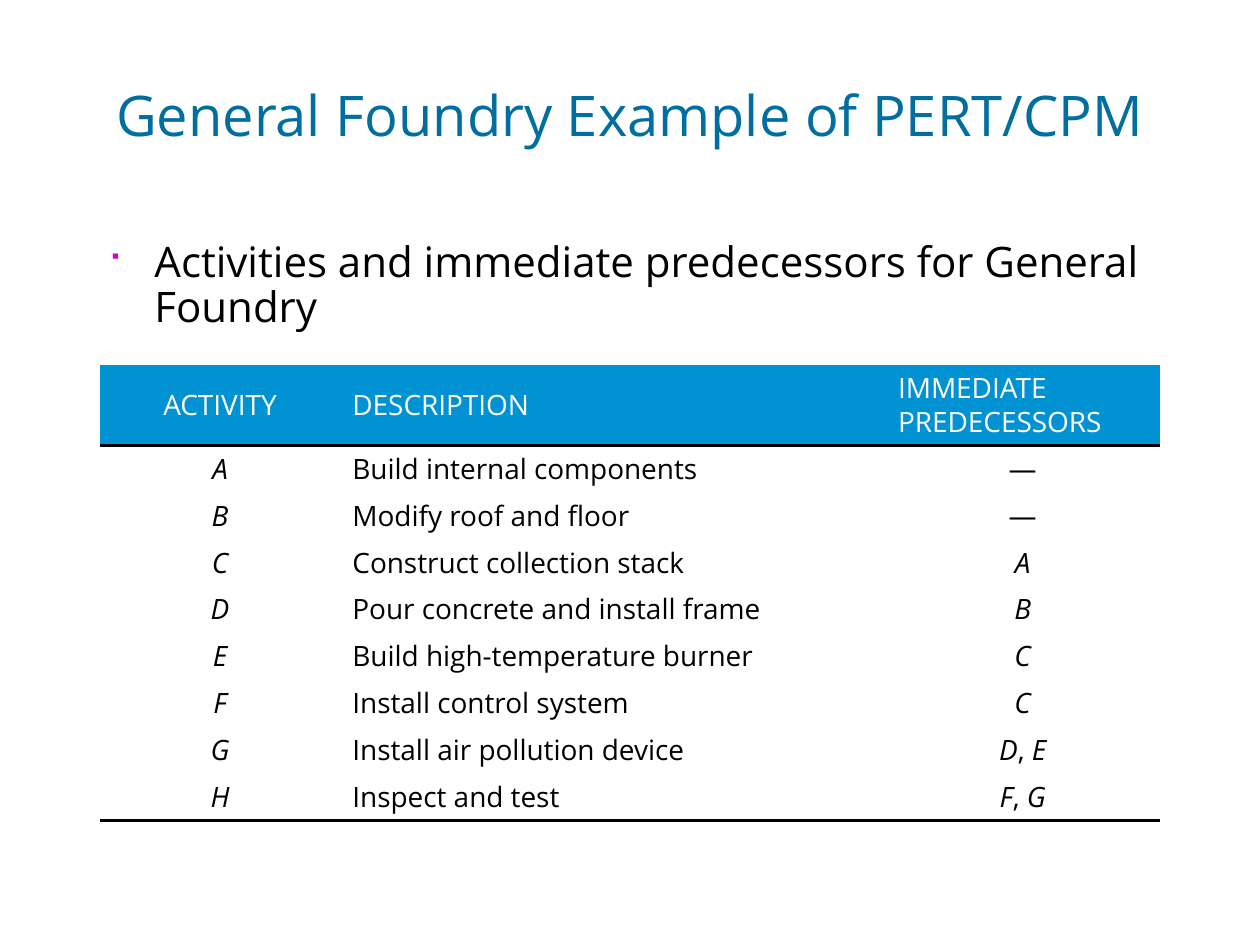
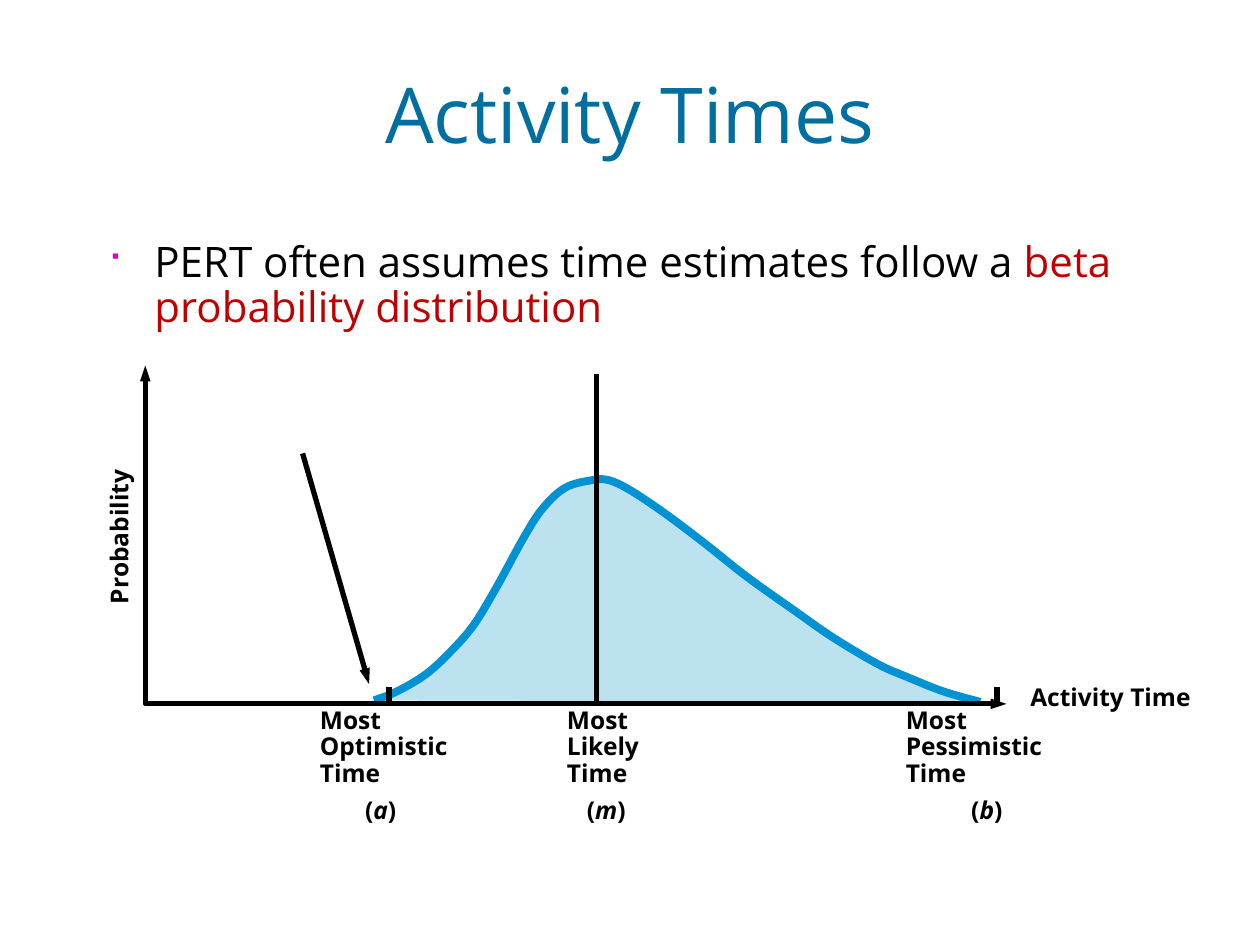
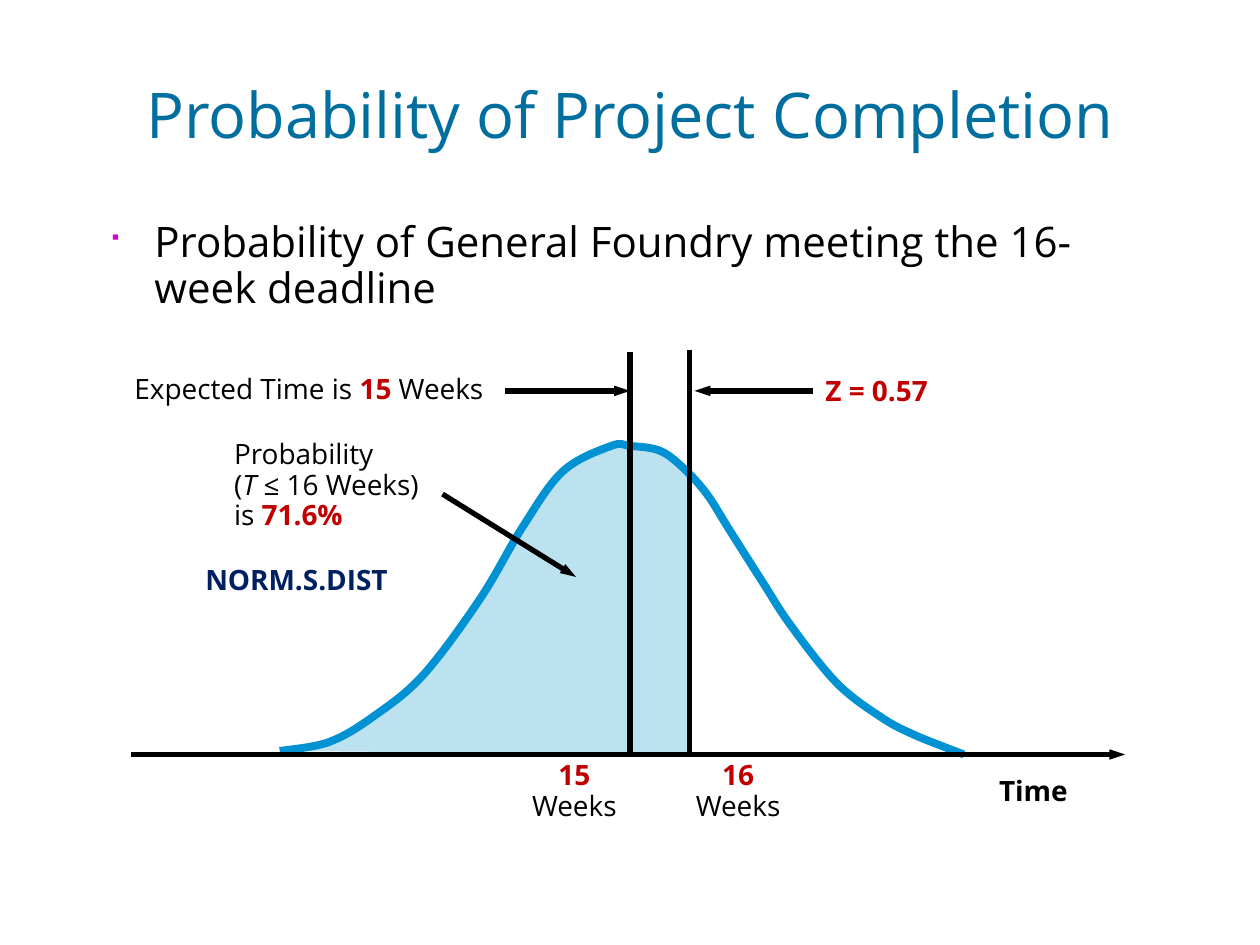
"""Build three slides on project planning with PERT."""
from typing import Any, NamedTuple, Optional, Sequence

import lxml.etree
import pptx
import pptx.dml.color
import pptx.enum.shapes
import pptx.enum.text
import pptx.oxml.ns
import pptx.util

Cm = pptx.util.Cm
RGBColor = pptx.dml.color.RGBColor
Align = pptx.enum.text.PP_ALIGN
Anchor = pptx.enum.text.MSO_ANCHOR
Fit = pptx.enum.text.MSO_AUTO_SIZE
qn = pptx.oxml.ns.qn

FONT = "Open Sans"
BLACK = RGBColor(0x00, 0x00, 0x00)
WHITE = RGBColor(0xFF, 0xFF, 0xFF)
TEAL = RGBColor(0x00, 0x6E, 0x9E)
BLUE = RGBColor(0x00, 0x92, 0xD3)
PALE = RGBColor(0xBB, 0xE2, 0xEE)
NAVY = RGBColor(0x00, 0x20, 0x60)
RED = RGBColor(0xC0, 0x00, 0x00)
PINK = RGBColor(0xD3, 0x00, 0xD0)
NO_GRID = "{2D5ABB26-0587-4C30-8999-92F81FD0307C}"
LEFT, WIDTH = 1.91, 21.59

Point = tuple[float, float]


class Run(NamedTuple):
    text: str
    color: Optional[RGBColor] = None
    bold: bool = False
    slant: bool = False


class Label(NamedTuple):
    left: float
    top: float
    width: float
    height: float
    runs: Sequence[Run]
    wrap: bool = False
    align: Align = Align.LEFT
    pitch: float = 0.9
    turn: float = 0


class Line(NamedTuple):
    start: Point
    end: Point
    tail: bool = False


class Mark(NamedTuple):
    name: str
    sign: str
    left: float
    width: float
    sign_left: float


def write(frame: Any, text: str | Sequence[Run], *, size: float, color: RGBColor = BLACK,
          align: Align = Align.LEFT, pitch: float = 0.9, lead: float = 0) -> None:
    """Fill the first paragraph of a frame with formatted runs."""
    par = frame.paragraphs[0]
    par.alignment, par.line_spacing = align, pitch
    par.space_before = pptx.util.Pt(size * lead)
    for part in [Run(text)] if isinstance(text, str) else text:
        for i, piece in enumerate(part.text.split("\n")):
            if i:
                par.add_line_break()
            if piece:
                run = par.add_run()
                run.text = piece
                run.font.name, run.font.size = FONT, pptx.util.Pt(size)
                run.font.bold, run.font.italic = part.bold, part.slant
                run.font.color.rgb = part.color or color


def place(shape: Any, left: float, top: float, width: float, height: float) -> None:
    """Move and size a shape in centimetres."""
    shape.left, shape.top = Cm(left), Cm(top)
    shape.width, shape.height = Cm(width), Cm(height)


def add_slide(deck: Any, title: str, size: float, point: str | Sequence[Run],
              top: float = 4.73) -> Any:
    """Add a slide with its title and one bullet point."""
    slide = deck.slides.add_slide(deck.slide_layouts[1])
    head, body = slide.placeholders
    place(head, LEFT, 1.08, WIDTH, 2.62)
    place(body, LEFT, top, WIDTH, 2.4)
    for shape, anchor in ((head, Anchor.MIDDLE), (body, Anchor.TOP)):
        shape.text_frame.auto_size = Fit.NONE
        shape.text_frame.vertical_anchor = anchor
    write(head.text_frame, title, size=size, color=TEAL, align=Align.CENTER, lead=0.2)
    write(body.text_frame, point, size=24, lead=0.2)
    props = body.text_frame.paragraphs[0]._p.get_or_add_pPr()
    props.set("marL", str(Cm(0.95)))
    props.set("indent", str(-Cm(0.95)))
    tint = lxml.etree.SubElement(props, qn("a:buClr"))
    lxml.etree.SubElement(tint, qn("a:srgbClr"), val=str(PINK))
    lxml.etree.SubElement(props, qn("a:buSzPct"), val="85000")
    lxml.etree.SubElement(props, qn("a:buFont"), typeface="Wingdings", charset="2")
    lxml.etree.SubElement(props, qn("a:buChar"), char="■")
    return slide


def stroke(shape: Any, color: RGBColor = BLACK, width: float = 3,
           ends: Sequence[str] = ()) -> None:
    """Set a line's colour, width and slim arrowheads."""
    shape.line.color.rgb = color
    shape.line.width = pptx.util.Pt(width)
    for end in ends:
        lxml.etree.SubElement(shape.line._get_or_add_ln(), qn(f"a:{end}"),
                              type="triangle", w="sm", len="med")


def add_line(slide: Any, line: Line) -> Any:
    """Draw a straight black line, with an arrowhead if asked."""
    ends = [Cm(n) for n in (*line.start, *line.end)]
    shape = slide.shapes.add_connector(pptx.enum.shapes.MSO_CONNECTOR.STRAIGHT, *ends)
    stroke(shape, ends=["tailEnd"] if line.tail else [])
    lxml.etree.SubElement(shape._element.spPr, qn("a:effectLst"))
    return shape


def add_label(slide: Any, label: Label, size: float) -> Any:
    """Add a text box for a label."""
    box = slide.shapes.add_textbox(*(Cm(n) for n in label[:4]))
    box.rotation = label.turn
    box.text_frame.word_wrap = label.wrap
    box.text_frame.auto_size = Fit.SHAPE_TO_FIT_TEXT
    write(box.text_frame, label.runs, size=size, align=label.align, pitch=label.pitch)
    return box


def add_form(slide: Any, points: Sequence[Point], close: bool = False) -> Any:
    """Build an outline through points, without fill or shadow."""
    spots = [(Cm(x), Cm(y)) for x, y in points]
    build = slide.shapes.build_freeform(*spots[0])
    build.add_line_segments(spots[1:], close=close)
    shape = build.convert_to_shape()
    shape.shadow.inherit = False
    shape.fill.background()
    return shape


def bend(shape: Any, count: int) -> None:
    """Turn the segments between the first knots into smooth curves."""
    nodes = list(shape._element.iter(qn("a:pt")))[:count]
    knots = [(int(node.get("x")), int(node.get("y"))) for node in nodes]
    padded = [knots[0], *knots, knots[-1]]
    for node, a, b, c, d in zip(nodes[1:], padded, padded[1:], padded[2:], padded[3:]):
        step = node.getparent()
        curve = lxml.etree.Element(qn("a:cubicBezTo"))
        step.getparent().replace(step, curve)
        first = [q + (r - p) / 6 for p, q, r in zip(a, b, c)]
        second = [r - (s - q) / 6 for q, r, s in zip(b, c, d)]
        for x, y in (first, second, c):
            lxml.etree.SubElement(curve, qn("a:pt"), x=str(round(x)), y=str(round(y)))


def add_bell(slide: Any, knots: Sequence[Point], edge: Sequence[Point] = ()) -> None:
    """Draw a bell curve, shaded up to its right edge."""
    area = [knot for knot in knots if not edge or knot[0] < edge[0][0]]
    shade = add_form(slide, [*area, *edge], close=True)
    bend(shade, len(area))
    shade.fill.solid()
    shade.fill.fore_color.rgb = PALE
    shade.line.fill.background()
    curve = add_form(slide, knots)
    bend(curve, len(knots))
    stroke(curve, BLUE, 4.5)


def rule(cell: Any, shown: bool) -> None:
    """Set the border under a cell, black or hidden."""
    edge = lxml.etree.Element(qn("a:lnB"), w=str(pptx.util.Pt(2.25)))
    fill = lxml.etree.SubElement(edge, qn("a:solidFill" if shown else "a:noFill"))
    if shown:
        lxml.etree.SubElement(fill, qn("a:srgbClr"), val=str(BLACK))
    cell._tc.get_or_add_tcPr().insert(0, edge)


def add_table(slide: Any, rows: Sequence[Sequence[str]], widths: Sequence[float]) -> None:
    """Add the table of tasks, its first row as header."""
    high, low = 1.47, 0.92
    last = len(rows) - 1
    table = slide.shapes.add_table(len(rows), len(widths), Cm(2.02), Cm(7.35),
                                   Cm(sum(widths)), Cm(high + low * last)).table
    table.first_row = table.horz_banding = False
    table._tbl.tblPr.find(qn("a:tableStyleId")).text = NO_GRID
    for col, width in zip(table.columns, widths):
        col.width = Cm(width)
    for r, row in enumerate(rows):
        table.rows[r].height = Cm(low if r else high)
        for c, text in enumerate(row):
            cell = table.cell(r, c)
            cell.vertical_anchor = Anchor.MIDDLE
            if r:
                cell.fill.background()
            else:
                cell.fill.solid()
                cell.fill.fore_color.rgb = BLUE
            rule(cell, r in (0, last))
            mid = c == 0 or (c == 2 and r > 0)
            first, *rest = text.split(",")
            runs = [Run(first, slant=mid and r > 0 and text != "—")]
            for more in rest:
                runs += [Run(","), Run(more, slant=True)]
            write(cell.text_frame, runs, size=16, color=BLACK if r else WHITE,
                  align=Align.CENTER if mid else Align.LEFT, lead=0.2)


def add_tasks(deck: Any) -> None:
    """Add the slide that lists the tasks."""
    slide = add_slide(deck, "General Foundry Example of PERT/CPM", 32,
                      "Activities and immediate predecessors for General Foundry")
    rows = [
        ("ACTIVITY", "DESCRIPTION", "IMMEDIATE PREDECESSORS"),
        ("A", "Build internal components", "—"),
        ("B", "Modify roof and floor", "—"),
        ("C", "Construct collection stack", "A"),
        ("D", "Pour concrete and install frame", "B"),
        ("E", "Build high-temperature burner", "C"),
        ("F", "Install control system", "C"),
        ("G", "Install air pollution device", "D, E"),
        ("H", "Inspect and test", "F, G"),
    ]
    add_table(slide, rows, (4.83, 11, 5.53))


def add_times(deck: Any) -> None:
    """Add the slide with the beta curve of task times."""
    point = [Run("PERT often assumes time estimates follow a "),
             Run("beta probability distribution", RED)]
    slide = add_slide(deck, "Activity Times", 44, point)
    add_line(slide, Line((6.1, 9.14), (7.44, 13.79), tail=True))
    knots = [
        (7.54, 14.12), (8, 13.94), (8.59, 13.59), (9.09, 13.13), (9.55, 12.6),
        (10.01, 11.84), (10.57, 10.82), (10.95, 10.24), (11.4, 9.83), (11.94, 9.68),
        (12.27, 9.68), (12.7, 9.88), (13.39, 10.34), (14.2, 10.95), (15.06, 11.63),
        (16.03, 12.32), (16.79, 12.85), (17.7, 13.39), (18.34, 13.67), (19.02, 13.94),
        (19.76, 14.15),
    ]
    add_bell(slide, knots)
    base = 14.19
    axes = add_form(slide, [(2.93, 7.37), (2.93, base), (20.29, base)])
    stroke(axes, ends=["headEnd", "tailEnd"])
    names = [
        Label(0.79, 10.39, 3.28, 0.79, [Run("Probability", bold=True)], turn=270),
        Label(20.52, 13.69, 3.99, 0.79, [Run("Activity Time", bold=True)]),
    ]
    marks = [
        Mark("Likely", "m", 11.18, 2.92, 11.58),
        Mark("Optimistic", "a", 6.2, 3.68, 7.11),
        Mark("Pessimistic", "b", 18.01, 3.89, 19.33),
    ]
    for mark in marks:
        name = [Run(f"Most {mark.name} Time", bold=True)]
        sign = [Run("(", bold=True), Run(mark.sign, bold=True, slant=True), Run(")", bold=True)]
        names += [
            Label(mark.left, 14.15, mark.width, 1.85, name, wrap=True),
            Label(mark.sign_left, 15.9, 1.32 if mark.sign == "m" else 1.17, 0.86, sign, pitch=1),
        ]
    for name in names:
        add_label(slide, name, 14)
    for x, top in ((7.84, 13.84), (20.1, 13.84), (12.03, 7.54)):
        add_line(slide, Line((x, top), (x, base)))


def add_chance(deck: Any) -> None:
    """Add the slide with the chance of meeting the deadline."""
    slide = add_slide(deck, "Probability of Project Completion", 36,
                      "Probability of General Foundry meeting the 16-week deadline", 4.34)
    mean, due, base, level = 12.7, 13.9, 15.21, 7.88
    knots = [
        (5.64, 15.14), (6.63, 14.96), (7.52, 14.45), (8.53, 13.61), (9.68, 12.07),
        (10.54, 10.62), (11.35, 9.5), (12.32, 8.99), (12.7, 8.99), (13.31, 9.09),
        (13.79, 9.45), (14.25, 9.96), (14.71, 10.69), (15.39, 11.76), (15.95, 12.62),
        (16.87, 13.77), (17.75, 14.45), (18.42, 14.81), (19.43, 15.21),
    ]
    add_bell(slide, knots, [(due, 9.55), (due, base)])
    lines = [
        Line((mean, 7.09), (mean, base)),
        Line((due, 7.06), (due, base)),
        Line((2.64, base), (22.68, base), tail=True),
        Line((8.92, 9.96), (11.61, 11.63), tail=True),
        Line((10.19, level), (mean, level), tail=True),
    ]
    for line in lines:
        add_line(slide, line)
    score = Label(16.39, 7.41, 2.82, 0.94, [Run("Z = 0.57", RED, bold=True)], pitch=1)
    box = add_label(slide, score, 16)
    add_line(slide, Line((16.39, level), (14, level), tail=True)).begin_connect(box, 1)
    notes = [
        Label(19.89, 15.47, 1.98, 0.94, [Run("Time", bold=True)], pitch=1),
        Label(2.46, 7.44, 8.2, 0.86,
              [Run("Expected Time is "), Run("15", RED, bold=True), Run(" Weeks")]),
        Label(4.47, 8.76, 4.75, 2.11,
              [Run("Probability\n("), Run("T ", slant=True), Run("≤ 16 Weeks)\nis "),
               Run("71.6%", RED, bold=True)]),
        Label(3.89, 11.21, 4.34, 0.94, [Run("NORM.S.DIST", NAVY, bold=True)], pitch=1),
    ]
    for weeks, left in (("15", 10.16), ("16", 13.46)):
        runs = [Run(f"{weeks}\n", RED, bold=True), Run("Weeks")]
        notes.append(Label(left, 15.23, 2.84, 1.47, runs, wrap=True, align=Align.CENTER))
    for note in notes:
        add_label(slide, note, 16)


def main() -> None:
    """Build the deck and save it."""
    deck = pptx.Presentation()
    deck.slide_width, deck.slide_height = Cm(25.4), Cm(19.05)
    add_tasks(deck)
    add_times(deck)
    add_chance(deck)
    deck.save("out.pptx")


if __name__ == "__main__":
    main()
